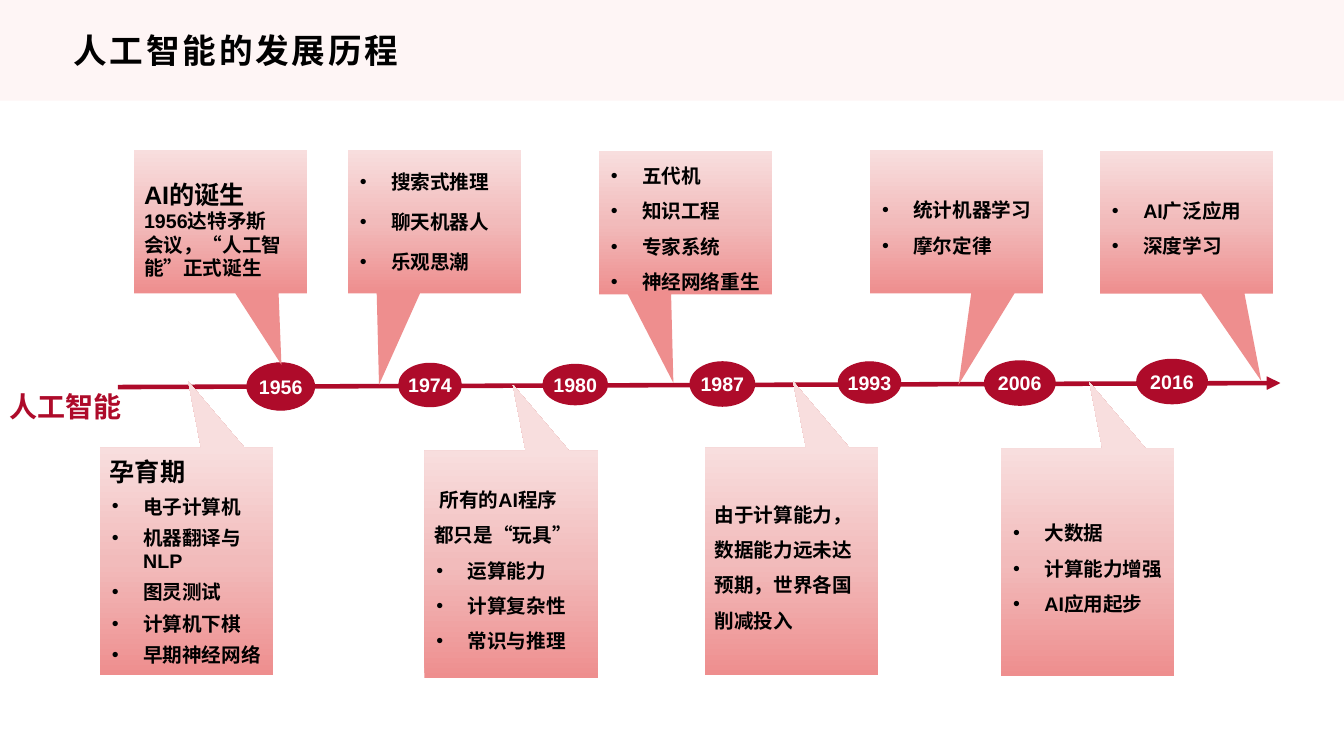
import copy
from dataclasses import dataclass

import lxml.etree
import pptx
import pptx.dml.color
import pptx.enum.dml
import pptx.enum.shapes
import pptx.enum.text
import pptx.oxml.ns
import pptx.util

WIDE = pptx.util.Inches(13.33)
HIGH = pptx.util.Inches(7.5)
RED, WHITE, BLACK = "AE0B2A", "FFFFFF", "000000"
BLEND = ((0, "EE8E8E"), (0.5, "F2BBBB"), (1, "F8DEDE"))
KIND = pptx.enum.shapes.MSO_SHAPE
ALIGN = pptx.enum.text.PP_ALIGN
MIDDLE = pptx.enum.text.MSO_ANCHOR.MIDDLE


@dataclass
class Line:
    text: str
    size: float = 14
    color: str = BLACK
    bullet: bool = False
    lead: float = 0
    before: float = 0
    pitch: float = 1
    track: float = 0
    align: ALIGN = ALIGN.LEFT


@dataclass
class Year:
    name: str
    mid: float
    level: float
    width: float
    height: float
    edge: float = 3


@dataclass
class Card:
    left: float
    top: float
    height: float
    tip: tuple[float, float]
    lines: list[Line]


def across(share: float) -> int:
    """Length as a percentage of the slide's width."""
    return round(WIDE * share / 100)


def down(share: float) -> int:
    """Length as a percentage of the slide's height."""
    return round(HIGH * share / 100)


def frame(left: float, top: float, width: float, height: float) -> tuple[int, ...]:
    return across(left), down(top), across(width), down(height)


def paint(target, color: str) -> None:
    target.rgb = pptx.dml.color.RGBColor.from_string(color)


def fill(shape, color: str) -> None:
    shape.fill.solid()
    paint(shape.fill.fore_color, color)


def write(shape, lines: list[Line], inset: bool = True, wrap: bool = True) -> None:
    frm = shape.text_frame
    frm.word_wrap = wrap
    frm.vertical_anchor = MIDDLE
    if not inset:
        frm.margin_left = frm.margin_right = frm.margin_top = frm.margin_bottom = 0
    for num, line in enumerate(lines):
        par = frm.add_paragraph() if num else frm.paragraphs[0]
        par.text = line.text
        par.alignment = line.align
        par.line_spacing = line.pitch
        if line.before:
            par.space_before = pptx.util.Pt(line.before)
        props = par._p.get_or_add_pPr()
        if line.bullet:
            props.set("marL", str(across(2.48)))
            props.set("indent", str(across(-2.33)))
            face = lxml.etree.SubElement(props, pptx.oxml.ns.qn("a:buFont"))
            face.set("typeface", "Arial")
            mark = lxml.etree.SubElement(props, pptx.oxml.ns.qn("a:buChar"))
            mark.set("char", "•")
        elif line.lead:
            props.set("indent", str(across(line.lead)))
        font = par.font
        font.name, font.bold, font.size = "Arial", True, pptx.util.Pt(line.size)
        paint(font.color, line.color)
        if line.track:
            font._rPr.set("spc", str(round(line.track * 100)))


def label(slide, box: tuple[int, ...], line: Line, inset: bool) -> None:
    write(slide.shapes.add_textbox(*box), [line], inset)


def axis(slide) -> None:
    bar = slide.shapes.add_connector(
        pptx.enum.shapes.MSO_CONNECTOR.STRAIGHT,
        across(8.78), down(51.2), across(95.27), down(50.67))
    paint(bar.line.color, RED)
    bar.line.width = pptx.util.Pt(3.25)
    head = lxml.etree.SubElement(bar.line._get_or_add_ln(), pptx.oxml.ns.qn("a:tailEnd"))
    head.set("type", "triangle")
    lxml.etree.SubElement(bar._element.spPr, pptx.oxml.ns.qn("a:effectLst"))


def badge(slide, year: Year) -> None:
    oval = slide.shapes.add_shape(KIND.OVAL, *frame(
        year.mid - year.width / 2, year.level - year.height / 2, year.width, year.height))
    oval.shadow.inherit = False
    fill(oval, RED)
    paint(oval.line.color, RED)
    oval.line.width = pptx.util.Pt(year.edge)
    write(oval, [Line(year.name, color=WHITE, align=ALIGN.CENTER)], False, wrap=False)


def callout(slide, card: Card) -> None:
    shape = slide.shapes.add_shape(
        KIND.RECTANGULAR_CALLOUT, *frame(card.left, card.top, 12.9, card.height))
    shape.adjustments[0], shape.adjustments[1] = card.tip
    shape.shadow.inherit = False
    shape.line.fill.background()
    shape.fill.gradient()
    shape.fill.gradient_angle = 90
    first = shape._element.spPr.find(".//" + pptx.oxml.ns.qn("a:gs"))
    first.addnext(copy.deepcopy(first))
    for stop, (place, color) in zip(shape.fill.gradient_stops, BLEND):
        stop.position = place
        paint(stop.color, color)
    write(shape, card.lines)


def items(*texts: str, before: float = 0, pitch: float = 1.5) -> list[Line]:
    """Bulleted lines."""
    return [Line(text, bullet=True, before=before, pitch=pitch) for text in texts]


chat = items("搜索式推理", "聊天机器人", "乐观思潮", before=12, pitch=1)
chat[0].before = 0

YEARS = [
    Year("1956", 20.89, 51.13, 5.03, 6.27, 0.75),
    Year("1974", 32, 50.93, 4.43, 5.33),
    Year("1980", 42.8, 50.87, 4.58, 4.93),
    Year("1987", 53.75, 50.8, 4.58, 5.47),
    Year("1993", 64.7, 50.6, 4.65, 5.47, 0.75),
    Year("2006", 75.88, 50.67, 5.03, 5.47),
    Year("2016", 87.21, 50.47, 5.03, 5.47),
]
SHORT, TALL = 18.93, 30.13
UP = (0.01, -0.79)
CARDS = [
    Card(7.43, 59.2, TALL, UP, [Line("孕育期", 18)] + items(
        "电子计算机", "机器翻译与NLP", "图灵测试", "计算机下棋", "早期神经网络",
        before=5.5, pitch=1)),
    Card(9.98, 19.87, SHORT, (0.35, 1), [
        Line("AI的诞生", 18, pitch=1.5),
        Line("1956达特矛斯\v会议，“人工智\v能”正式诞生")]),
    Card(25.88, 19.87, SHORT, (-0.32, 1.14), chat),
    Card(44.56, 20, SHORT, (-0.07, 1.12),
         items("五代机", "知识工程", "专家系统", "神经网络重生")),
    Card(64.74, 19.87, SHORT, (0.01, 1.14), items("统计机器学习", "摩尔定律")),
    Card(81.85, 19.93, SHORT, (0.43, 1.11), items("AI广泛应用", "深度学习")),
    Card(31.58, 59.6, TALL, UP, [
        Line("所有的AI程序\v都只是“玩具”", lead=0.38, pitch=1.5),
        *items("运算能力", "计算复杂性", "常识与推理")]),
    Card(52.44, 59.2, TALL, UP, [
        Line("由于计算能力，数据能力远未达预期，世界各国削减投入", pitch=1.5)]),
    Card(74.49, 59.33, TALL, UP, items("大数据", "计算能力增强", "AI应用起步")),
]


def main() -> None:
    deck = pptx.Presentation()
    deck.slide_width, deck.slide_height = WIDE, HIGH
    slide = deck.slides.add_slide(deck.slide_layouts[6])
    band = slide.shapes.add_shape(KIND.RECTANGLE, *frame(0, 0, 100, 13.33))
    band.shadow.inherit = False
    fill(band, "FEF5F5")
    band.line.fill.background()
    label(slide, frame(4.73, 3.47, 90.55, 6.4),
          Line("人工智能的发展历程", 24, track=2), True)
    axis(slide)
    for year in YEARS:
        badge(slide, year)
    label(slide, frame(0.68, 51.47, 8.55, 4.67), Line("人工智能", 20, RED), False)
    for card in CARDS:
        callout(slide, card)
    deck.save("out.pptx")


if __name__ == "__main__":
    main()
